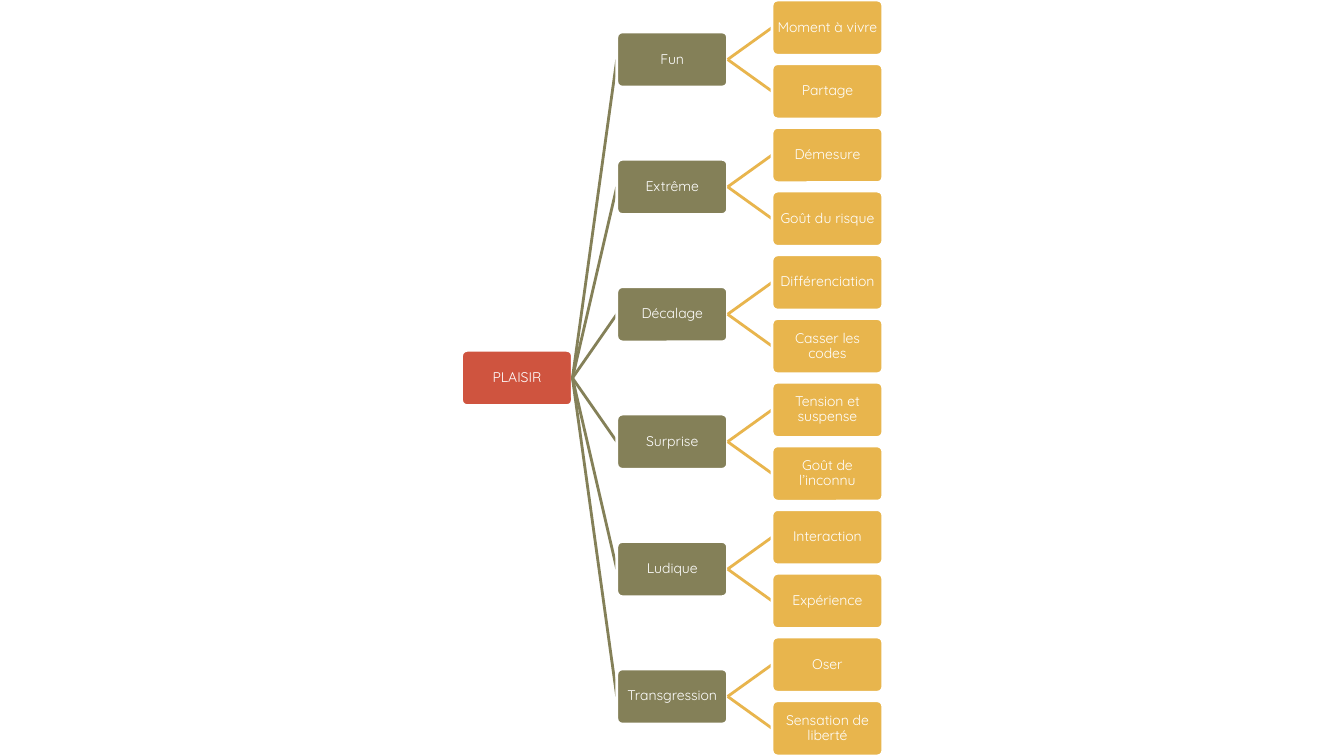
from lxml.etree import SubElement
from pptx import Presentation
from pptx.dml.color import RGBColor
from pptx.enum.shapes import MSO_CONNECTOR, MSO_SHAPE
from pptx.enum.text import MSO_ANCHOR, PP_ALIGN
from pptx.oxml.ns import qn
from pptx.util import Pt

# Content
ROOT = "PLAISIR"
TREE = [
    ("Fun", ["Moment à vivre", "Partage"]),
    ("Extrême", ["Démesure", "Goût du risque"]),
    ("Décalage", ["Différenciation", "Casser les codes"]),
    ("Surprise", ["Tension et suspense", "Goût de l’inconnu"]),
    ("Ludique", ["Interaction", "Expérience"]),
    ("Transgression", ["Oser", "Sensation de liberté"]),
]
FILLS = ["CF543F", "848058", "E8B54D"]  # one per level
WHITE = "FFFFFF"
FONT = "Quicksand"

# Layout in points
WIDE, HIGH = 960, 540
BOX_W, BOX_H = 79.2, 39.5
LEFT, STEP = 329.7, 110.88
LEAVES = sum(len(kids) for _, kids in TREE)
PITCH = (HIGH - BOX_H) / (LEAVES - 1)


def color(text):
    return RGBColor.from_string(text)


def box(slide, label, level, mid):
    shape = slide.shapes.add_shape(
        MSO_SHAPE.ROUNDED_RECTANGLE, Pt(LEFT + level * STEP),
        Pt(mid - BOX_H / 2), Pt(BOX_W), Pt(BOX_H))
    shape.adjustments[0] = 0.1
    shape.shadow.inherit = False
    shape.fill.solid()
    shape.fill.fore_color.rgb = color(FILLS[level])
    shape.line.color.rgb = color(WHITE)
    shape.line.width = Pt(2)
    frame = shape.text_frame
    frame.word_wrap = True
    frame.vertical_anchor = MSO_ANCHOR.MIDDLE
    frame.margin_left = frame.margin_right = Pt(0.8)
    frame.margin_top = frame.margin_bottom = Pt(0.8)
    para = frame.paragraphs[0]
    para.alignment = PP_ALIGN.CENTER
    para.line_spacing = 0.9
    run = para.add_run()
    run.text = label
    run.font.name = FONT
    run.font.size = Pt(10)
    run.font.color.rgb = color(WHITE)
    return shape


def branch(slide, parent, label, level, mid):
    # The line lies above its parent and below its child
    line = slide.shapes.add_connector(
        MSO_CONNECTOR.STRAIGHT, Pt(0), Pt(0), Pt(0), Pt(0))
    line.line.color.rgb = color(FILLS[level])
    line.line.width = Pt(2)
    SubElement(line._element.spPr, qn("a:effectLst"))
    child = box(slide, label, level, mid)
    line.begin_connect(parent, 3)
    line.end_connect(child, 1)
    return child


def main():
    deck = Presentation()
    deck.slide_width, deck.slide_height = Pt(WIDE), Pt(HIGH)
    slide = deck.slides.add_slide(deck.slide_layouts[6])

    # Tree: each parent is centred on its children
    root = box(slide, ROOT, 0, HIGH / 2)
    top = BOX_H / 2
    for theme, kids in TREE:
        mid = top + (len(kids) - 1) * PITCH / 2
        node = branch(slide, root, theme, 1, mid)
        for kid in kids:
            branch(slide, node, kid, 2, top)
            top += PITCH

    deck.save("out.pptx")


if __name__ == "__main__":
    main()
